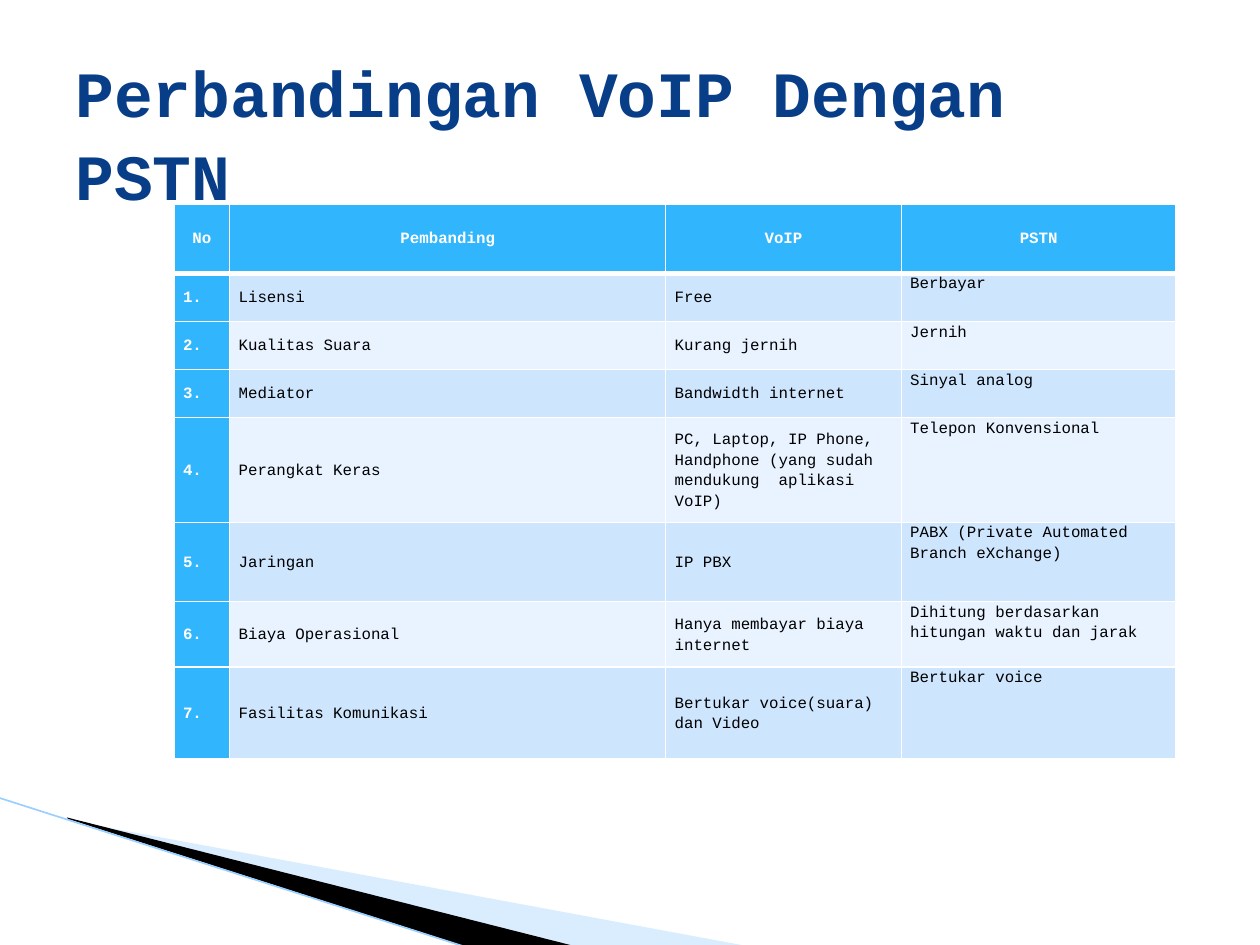
import dataclasses

import lxml.etree
import pptx
import pptx.dml.color
import pptx.enum.shapes
import pptx.enum.text
import pptx.oxml
import pptx.oxml.ns
import pptx.util

Cm = pptx.util.Cm
Pt = pptx.util.Pt
qn = pptx.oxml.ns.qn
ANCHOR = pptx.enum.text.MSO_ANCHOR
ALIGN = pptx.enum.text.PP_ALIGN

# Content
TITLE = "Perbandingan VoIP Dengan PSTN"
HEADER = ("No", "Pembanding", "VoIP", "PSTN")
COMPARISON = [
    ("Lisensi", "Free", "Berbayar"),
    ("Kualitas Suara", "Kurang jernih", "Jernih"),
    ("Mediator", "Bandwidth internet", "Sinyal analog"),
    ("Perangkat Keras",
     "PC, Laptop, IP Phone, Handphone (yang sudah mendukung  aplikasi VoIP)",
     "Telepon Konvensional"),
    ("Jaringan", "IP PBX", "PABX (Private Automated Branch eXchange)"),
    ("Biaya Operasional", "Hanya membayar biaya internet",
     "Dihitung berdasarkan hitungan waktu dan jarak"),
    ("Fasilitas Komunikasi", "Bertukar voice(suara) dan Video", "Bertukar voice"),
]

# Geometry in centimetres
COLUMN_WIDTHS = (1.12, 8.79, 4.75, 5.54)
ROW_HEIGHTS = (1.4, 0.97, 0.97, 0.97, 2.11, 1.6, 1.32, 1.85)
PALE_WEDGE = [(1.4, 16.54), (15.11, 19.08), (11.58, 19.08), (1.4, 16.51)]
DARK_WEDGE = [(1.35, 16.48), (11.61, 19.08), (9.45, 19.1), (1.37, 16.51)]
EDGE_LINE = [(-0.03, 16.08), (9.42, 19.1)]


@dataclasses.dataclass(frozen=True)
class Theme:
    font: str = "Courier New"
    title_size: float = 36.9
    table_size: float = 9
    title: str = "073E87"
    accent: str = "31B6FD"
    bands: tuple = ("CEE5FE", "E8F3FF")
    white: str = "FFFFFF"
    black: str = "000000"
    pale: str = "A3D3FF"
    edge: str = "99D0FF"


THEME = Theme()


def rgb(color):
    return pptx.dml.color.RGBColor.from_string(color)


def add_span(para, text, size, color, bold):
    span = para.add_run()
    span.text = text
    span.font.name = THEME.font
    span.font.size = Pt(size)
    span.font.bold = bold
    span.font.color.rgb = rgb(color)


def add_wedge(page, points, color, opacity=None):
    corners = [(Cm(x), Cm(y)) for x, y in points]
    builder = page.shapes.build_freeform(*corners[0])
    builder.add_line_segments(corners[1:], close=True)
    wedge = builder.convert_to_shape()
    wedge.shadow.inherit = False
    wedge.line.fill.background()
    wedge.fill.solid()
    wedge.fill.fore_color.rgb = rgb(color)
    if opacity is not None:
        tint = wedge.fill._xPr.find(".//" + qn("a:srgbClr"))
        lxml.etree.SubElement(tint, qn("a:alpha"), val=str(opacity * 1000))


def add_edge_line(page):
    ends = [Cm(value) for point in EDGE_LINE for value in point]
    edge = page.shapes.add_connector(pptx.enum.shapes.MSO_CONNECTOR.STRAIGHT, *ends)
    edge.line.color.rgb = rgb(THEME.edge)
    edge.line.width = Pt(0.95)
    lxml.etree.SubElement(edge._element.spPr, qn("a:effectLst"))


def add_title(page):
    box = page.shapes.add_textbox(Cm(1.27), Cm(0.76), Cm(22.86), Cm(3.18))
    frame = box.text_frame
    frame.word_wrap = True
    frame.vertical_anchor = ANCHOR.TOP
    frame.margin_top, frame.margin_bottom = Cm(0.18), 0
    para = frame.paragraphs[0]
    para.line_spacing = 1.08
    add_span(para, TITLE, THEME.title_size, THEME.title, True)


def set_borders(cell, is_header):
    properties = cell._tc.get_or_add_tcPr()
    for side in ("lnL", "lnR", "lnT", "lnB"):
        width = 3 if is_header and side == "lnB" else 1
        border = lxml.etree.SubElement(properties, qn("a:" + side), w=str(Pt(width)))
        fill = lxml.etree.SubElement(border, qn("a:solidFill"))
        lxml.etree.SubElement(fill, qn("a:srgbClr"), val=THEME.white)


def fill_cell(cell, text, row, column):
    is_header = row == 0
    is_accent = is_header or column == 0
    set_borders(cell, is_header)
    cell.fill.solid()
    cell.fill.fore_color.rgb = rgb(THEME.accent if is_accent else THEME.bands[(row - 1) % 2])
    cell.margin_left = cell.margin_right = Cm(0.18)
    cell.margin_top = cell.margin_bottom = 0
    top_aligned = column == len(HEADER) - 1 and not is_header
    cell.vertical_anchor = ANCHOR.TOP if top_aligned else ANCHOR.MIDDLE
    para = cell.text_frame.paragraphs[0]
    para.alignment = ALIGN.CENTER if is_header else ALIGN.LEFT
    para.line_spacing = 1.15
    add_span(para, text, THEME.table_size, THEME.white if is_accent else THEME.black, is_accent)


def add_comparison_table(page):
    rows = [HEADER] + [(f"{n}.", *entry) for n, entry in enumerate(COMPARISON, 1)]
    table = page.shapes.add_table(
        len(rows), len(HEADER), Cm(3.51), Cm(4.11),
        Cm(sum(COLUMN_WIDTHS)), Cm(sum(ROW_HEIGHTS))).table
    table.horz_banding = False
    for column, width in zip(table.columns, COLUMN_WIDTHS):
        column.width = Cm(width)
    for row, height in zip(table.rows, ROW_HEIGHTS):
        row.height = Cm(height)
    for r, texts in enumerate(rows):
        for c, text in enumerate(texts):
            fill_cell(table.cell(r, c), text, r, c)


def main():
    deck = pptx.Presentation()
    deck.slide_width, deck.slide_height = Cm(25.4), Cm(19.05)
    page = deck.slides.add_slide(deck.slide_layouts[6])
    # Corner decoration
    add_wedge(page, PALE_WEDGE, THEME.pale, opacity=40)
    add_wedge(page, DARK_WEDGE, THEME.black)
    add_edge_line(page)
    # Title and table
    add_title(page)
    add_comparison_table(page)
    deck.save("out.pptx")


if __name__ == "__main__":
    main()
